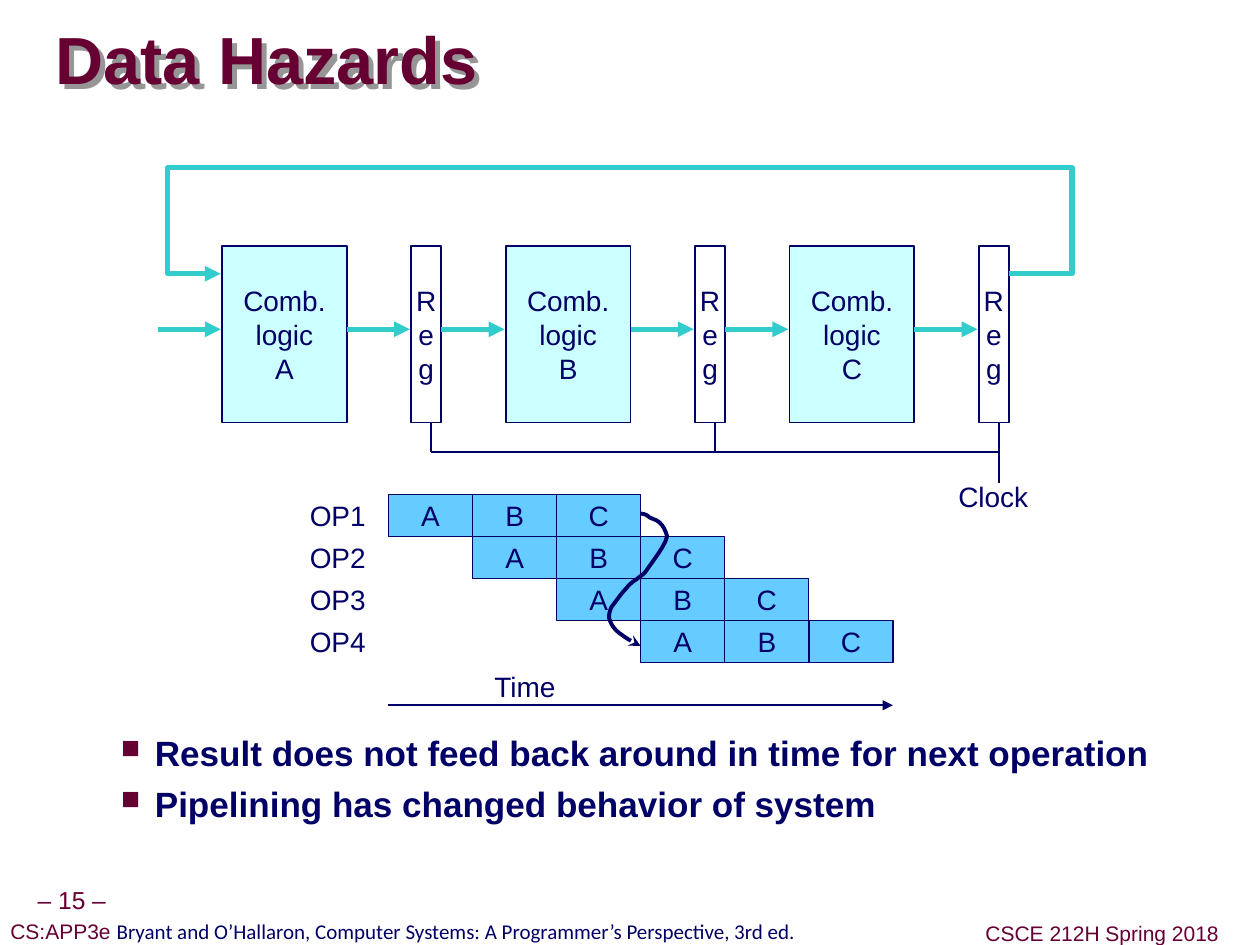
import pptx
import pptx.util
import pptx.dml.color
import pptx.enum.shapes
import pptx.enum.text
from lxml import etree
from pptx.oxml.ns import qn

Inches = pptx.util.Inches
Pt = pptx.util.Pt
RGB = pptx.dml.color.RGBColor
ALIGN = pptx.enum.text.PP_ALIGN
ANCHOR = pptx.enum.text.MSO_ANCHOR

MAROON = RGB(0x66, 0x00, 0x33)
NAVY = RGB(0x00, 0x00, 0x66)
TEAL = RGB(0x33, 0xCC, 0xCC)
PALE = RGB(0xCC, 0xFF, 0xFF)
SKY = RGB(0x66, 0xCC, 0xFF)
WHITE = RGB(0xFF, 0xFF, 0xFF)
SHADOW = RGB(0x96, 0x96, 0x96)

STAGE_X, STAGE_PITCH = 1.76, 2.25
STAGE_TOP, STAGE_H = 1.95, 1.4
LOGIC_W, REG_W, REG_DX = 0.99, 0.24, 1.5
FLOW_Y, CLOCK_Y = 2.61, 3.58
CELL_X, CELL_Y = 3.08, 3.92
CELL_W, CELL_H = 2 / 3, 1 / 3

# Bezier segments: two control points and an end point each.
HAZARD_START = (5.08, 4.07)
HAZARD_CURVES = [
    ((5.15, 4.08), (5.12, 4.09), (5.17, 4.11)),
    ((5.24, 4.13), (5.27, 4.18), (5.29, 4.25)),
    ((5.28, 4.32), (5.16, 4.47), (5.12, 4.53)),
    ((5.11, 4.55), (5.07, 4.57), (5.05, 4.59)),
    ((5.02, 4.61), (5.00, 4.62), (4.96, 4.67)),
    ((4.93, 4.70), (4.88, 4.77), (4.85, 4.81)),
    ((4.83, 4.85), (4.83, 4.87), (4.83, 4.90)),
    ((4.84, 4.93), (4.85, 4.96), (4.89, 5.00)),
    ((4.92, 5.03), (5.03, 5.10), (5.08, 5.12)),
]


def sub(parent, tag, **attrs):
    return etree.SubElement(parent, qn(tag), attrs)


def add_run(p, text, size, color, font="Arial", bold=False):
    r = p.add_run()
    r.text = text
    r.font.color.rgb = color
    formats = {"size": Pt(size), "name": font, "bold": bold}
    for name, value in formats.items():
        setattr(r.font, name, value)


def format_frame(tf, margins=(0, 0), anchor=ANCHOR.MIDDLE, wrap=False):
    dx, dy = map(Inches, margins)
    formats = {"margin_left": dx, "margin_right": dx, "margin_top": dy,
               "margin_bottom": dy, "vertical_anchor": anchor,
               "word_wrap": wrap}
    for name, value in formats.items():
        setattr(tf, name, value)


def add_textbox(s, box, **frame):
    tf = s.shapes.add_textbox(*map(Inches, box)).text_frame
    format_frame(tf, **frame)
    return tf


def add_label(s, box, text, align=ALIGN.CENTER, **frame):
    p = add_textbox(s, box, **frame).paragraphs[0]
    p.alignment = align
    add_run(p, text, 16, NAVY)


def add_box(s, box, lines, fill, width):
    """Add an outlined rectangle with one centred paragraph per line."""
    sp = s.shapes.add_shape(pptx.enum.shapes.MSO_SHAPE.RECTANGLE,
                            *map(Inches, box))
    sp.shadow.inherit = False
    sp.fill.solid()
    sp.fill.fore_color.rgb = fill
    format_line(sp, NAVY, width)
    tf = sp.text_frame
    format_frame(tf)
    for i, line in enumerate(lines):
        p = tf.add_paragraph() if i else tf.paragraphs[0]
        p.alignment = ALIGN.CENTER
        add_run(p, line, 16, NAVY)


def format_line(sp, color, width, head=None):
    sp.line.color.rgb = color
    sp.line.width = Pt(width)
    if head:
        sub(sp.line._get_or_add_ln(), "a:tailEnd", type=head)


def add_line(s, start, end, color=NAVY, width=1, head=None):
    sp = s.shapes.add_connector(pptx.enum.shapes.MSO_CONNECTOR.STRAIGHT,
                                *map(Inches, (*start, *end)))
    format_line(sp, color, width, head)
    sub(sp._element.spPr, "a:effectLst")


def add_path(s, points, color, width, head):
    """Add an open, unfilled outline through the points."""
    start, *rest = [(Inches(x), Inches(y)) for x, y in points]
    builder = s.shapes.build_freeform(*start)
    builder.add_line_segments(rest, close=False)
    sp = builder.convert_to_shape()
    sp.shadow.inherit = False
    sp.fill.background()
    format_line(sp, color, width, head)


def bezier_points(start, curves, steps=6):
    points = [start]
    for c1, c2, end in curves:
        knots = (points[-1], c1, c2, end)
        for i in range(1, steps + 1):
            t = i / steps
            u = 1 - t
            weights = (u ** 3, 3 * u * u * t, 3 * u * t * t, t ** 3)
            points.append(tuple(sum(w * k[axis] for w, k in zip(weights, knots))
                                for axis in (0, 1)))
    return points


def add_title(s, text):
    """Fill the title; on an unfilled shape the shadow falls from the text."""
    title = s.shapes.title
    title.left, title.top, title.width, title.height = map(
        Inches, (0.44, 0.08, 9.52, 0.85))
    format_frame(title.text_frame, wrap=True)
    p = title.text_frame.paragraphs[0]
    p.alignment = ALIGN.LEFT
    p.line_spacing = 0.87
    add_run(p, text, 38, MAROON, bold=True)
    title.fill.background()
    title.line.fill.background()
    effects = sub(title._element.spPr, "a:effectLst")
    shadow = sub(effects, "a:outerShdw", blurRad="0", dist=str(Pt(4)),
                 dir="2700000", algn="ctr", rotWithShape="0")
    sub(shadow, "a:srgbClr", val=str(SHADOW))


def add_bullets(s, box, items):
    tf = add_textbox(s, box, margins=(0.1, 0.05), anchor=ANCHOR.TOP, wrap=True)
    for i, item in enumerate(items):
        p = tf.add_paragraph() if i else tf.paragraphs[0]
        p.space_before = Pt(5)
        add_run(p, item, 20, NAVY, bold=True)
        pPr = p._p.get_or_add_pPr()
        pPr.set("marL", str(Inches(0.81)))
        pPr.set("indent", str(Inches(-0.27)))
        sub(sub(pPr, "a:buClr"), "a:srgbClr", val=str(MAROON))
        sub(pPr, "a:buSzPct", val="75000")
        sub(pPr, "a:buChar", char="■")


def add_footer(s, box, runs):
    p = add_textbox(s, box, margins=(0.05, 0.05)).paragraphs[0]
    p.alignment = ALIGN.CENTER
    p.line_spacing = 0.9
    for run in runs:
        add_run(p, *run)


def add_pipeline(s):
    for i, name in enumerate("ABC"):
        x = STAGE_X + i * STAGE_PITCH
        reg_x = x + REG_DX
        clock_x = reg_x + 0.16
        add_box(s, (x, STAGE_TOP, LOGIC_W, STAGE_H),
                ("Comb.", "logic", name), PALE, 1)
        add_box(s, (reg_x, STAGE_TOP, REG_W, STAGE_H), "Reg", WHITE, 1)
        for end in (x, reg_x):
            add_line(s, (end - 0.51, FLOW_Y), (end - 0.01, FLOW_Y),
                     TEAL, 3, "triangle")
        add_line(s, (clock_x, STAGE_TOP + STAGE_H),
                 (clock_x, 3.83 if name == "C" else CLOCK_Y))
    add_line(s, (3.42, CLOCK_Y), (7.92, CLOCK_Y))
    add_label(s, (7.5, 3.75, 0.75, 0.36), "Clock",
              margins=(0, 0.05), anchor=ANCHOR.TOP)
    feedback = [(8, 2.17), (8.5, 2.17), (8.5, 1.33),
                (1.33, 1.33), (1.33, 2.17), (1.75, 2.17)]
    add_path(s, feedback, TEAL, 3, "triangle")


def add_timing(s):
    for row in range(4):
        y = CELL_Y + row * CELL_H
        add_label(s, (2.08, y, 0.82, CELL_H), f"OP{row + 1}", ALIGN.RIGHT)
        for col, name in enumerate("ABC", row):
            add_box(s, (CELL_X + col * CELL_W, y, CELL_W, CELL_H),
                    name, SKY, 0.75)
    add_label(s, (3.92, 5.26, 0.69, 0.36), "Time", ALIGN.LEFT,
              margins=(0, 0.05), anchor=ANCHOR.TOP)
    add_line(s, (CELL_X, 5.59), (7.08, 5.59), head="triangle")
    add_path(s, bezier_points(HAZARD_START, HAZARD_CURVES),
             NAVY, 2.25, "stealth")


def main():
    prs = pptx.Presentation()
    prs.slide_width, prs.slide_height = Inches(9.99), Inches(7.49)
    s = prs.slides.add_slide(prs.slide_layouts.get_by_name("Title Only"))
    add_title(s, "Data Hazards")
    add_pipeline(s)
    add_timing(s)
    add_bullets(s, (0.32, 5.75, 9.07, 1.28), (
        "Result does not feed back around in time for next operation",
        "Pipelining has changed behavior of system"))
    add_footer(s, (0.24, 6.99, 0.66, 0.31), [("– 15 –", 14, MAROON)])
    add_footer(s, (0, 7.25, 6.39, 0.28), [
        ("CS:APP3e ", 12, MAROON),
        ("Bryant and O’Hallaron, Computer Systems: A Programmer’s "
         "Perspective, 3rd ed.", 12, NAVY, "Calibri")])
    add_footer(s, (7.76, 7.27, 1.96, 0.28),
               [("CSCE 212H Spring 2018", 12, MAROON)])
    prs.save("out.pptx")


if __name__ == "__main__":
    main()
